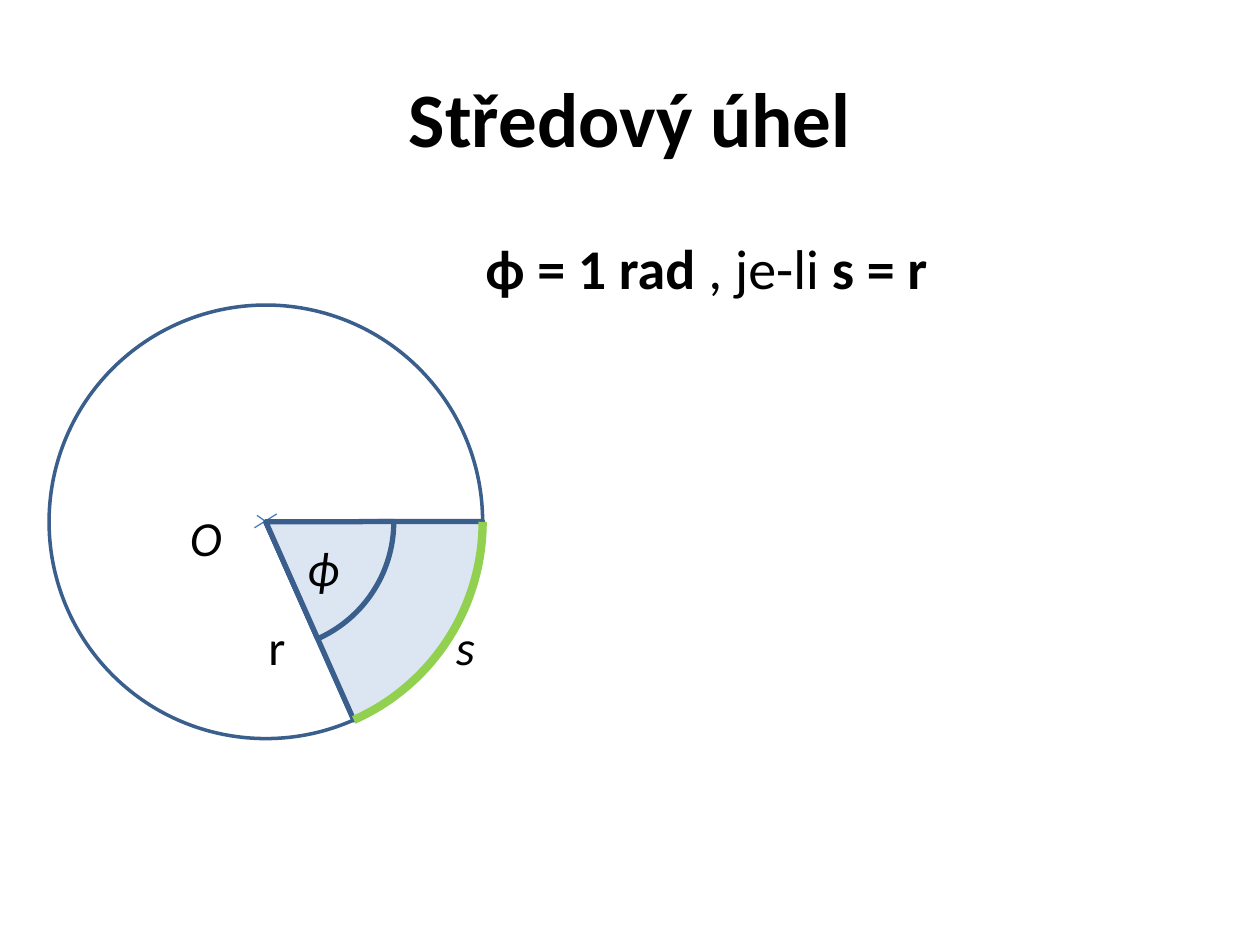
from dataclasses import dataclass
from math import cos, radians, sin

from lxml.etree import SubElement
from pptx import Presentation
from pptx.dml.color import RGBColor
from pptx.enum.shapes import MSO_CONNECTOR, MSO_SHAPE
from pptx.enum.text import MSO_ANCHOR, PP_ALIGN
from pptx.oxml.ns import qn
from pptx.util import Cm, Pt


@dataclass(frozen=True)
class Theme:
    """Colours, font and type sizes of the slide."""
    font: str = "Calibri"
    ink: str = "000000"
    outline: str = "3A5F8C"
    ray: str = "4B7EBC"
    sector: str = "DCE6F2"
    arc: str = "92D050"
    title: int = 44
    body: int = 32
    label: int = 28


@dataclass(frozen=True)
class Box:
    """A region of the slide in centimetres."""
    left: float
    top: float
    width: float
    height: float

    def lengths(self):
        """Return the region as slide lengths."""
        return [Cm(value) for value in (self.left, self.top, self.width, self.height)]


THEME = Theme()
ANGLE = 66.06
START = 359.91


def style_span(span, size, bold=False, italic=False):
    """Apply the theme font to a run."""
    span.font.name = THEME.font
    span.font.size = Pt(size)
    span.font.bold = bold
    span.font.italic = italic
    span.font.color.rgb = RGBColor.from_string(THEME.ink)


def style_line(line, color, width):
    """Set the colour and width of a line."""
    line.color.rgb = RGBColor.from_string(color)
    line.width = Pt(width)


def move(shape, box):
    """Place a shape in a box."""
    shape.left, shape.top, shape.width, shape.height = box.lengths()


def add_line(shapes, start, end, color, width):
    """Draw a straight line without a shadow."""
    points = [Cm(value) for value in (*start, *end)]
    line = shapes.add_connector(MSO_CONNECTOR.STRAIGHT, *points)
    style_line(line.line, color, width)
    SubElement(line._element.spPr, qn("a:effectLst"))


def add_round(page, kind, center, radius, width, fill=None):
    """Draw a circle or a pie around a centre."""
    box = Box(center[0] - radius, center[1] - radius, 2 * radius, 2 * radius)
    shape = page.shapes.add_shape(kind, *box.lengths())
    shape.shadow.inherit = False
    style_line(shape.line, THEME.outline, width)
    if fill:
        shape.fill.solid()
        shape.fill.fore_color.rgb = RGBColor.from_string(fill)
    else:
        shape.fill.background()
    return shape


def add_sector(page, center, radius):
    """Draw the sector that spans the central angle."""
    pie = add_round(page, MSO_SHAPE.PIE, center, radius, 3, THEME.sector)
    pie.adjustments[0] = START * 0.6
    pie.adjustments[1] = ANGLE * 0.6


def point_on_circle(center, radius, degrees):
    """Return the point at an angle measured clockwise."""
    turn = radians(degrees)
    return center[0] + radius * cos(turn), center[1] + radius * sin(turn)


def add_arc(page, center, radius):
    """Trace the arc s along the rim of the circle."""
    steps = 33
    points = [point_on_circle(center, radius, ANGLE * step / steps) for step in range(steps + 1)]
    points = [(Cm(x), Cm(y)) for x, y in points]
    builder = page.shapes.build_freeform(*points[0])
    builder.add_line_segments(points[1:], close=False)
    arc = builder.convert_to_shape()
    arc.shadow.inherit = False
    arc.fill.background()
    style_line(arc.line, THEME.arc, 4.75)


def add_label(page, box, text, italic):
    """Write a letter of the diagram."""
    frame = page.shapes.add_textbox(*box.lengths()).text_frame
    frame.word_wrap = True
    frame.text = text
    style_span(frame.paragraphs[0].runs[0], THEME.label, italic=italic)


def add_cross(page, center):
    """Mark the centre with two short crossing strokes."""
    x, y = center
    group = page.shapes.add_group_shape()
    add_line(group.shapes, (x - 0.18, y - 0.13), (x + 0.22, y + 0.15), THEME.ray, 0.75)
    add_line(group.shapes, (x + 0.22, y - 0.16), (x - 0.23, y + 0.12), THEME.ray, 0.75)


def add_title(page, box):
    """Fill the title placeholder."""
    title = page.shapes.title
    move(title, box)
    frame = title.text_frame
    frame.text = "Středový úhel"
    frame.vertical_anchor = MSO_ANCHOR.MIDDLE
    frame.paragraphs[0].alignment = PP_ALIGN.CENTER
    style_span(frame.paragraphs[0].runs[0], THEME.title, bold=True)


def add_definition(page, box):
    """Fill the body placeholder with the definition of a radian."""
    body = page.placeholders[1]
    move(body, box)
    para = body.text_frame.paragraphs[0]
    for text, bold in (("ϕ = 1 rad ", True), (", je-li ", False), ("s = r", True)):
        span = para.add_run()
        span.text = text
        style_span(span, THEME.body, bold=bold)
    properties = para._p.get_or_add_pPr()
    properties.set("marL", "0")
    properties.set("indent", "0")
    SubElement(properties, qn("a:buNone"))


def add_diagram(page, box):
    """Draw the circle with its central angle, arc and letters."""
    radius = box.width / 2
    center = (box.left + radius, box.top + radius)
    add_round(page, MSO_SHAPE.OVAL, center, radius, 2)
    add_line(page.shapes, center, point_on_circle(center, radius, 0), THEME.ink, 0.75)
    add_line(page.shapes, center, point_on_circle(center, radius, ANGLE), THEME.ray, 3)
    add_cross(page, center)
    add_sector(page, center, radius)
    add_arc(page, center, radius)
    add_sector(page, center, 2.58)
    labels = (("r", 4.17, 6.15, False), ("O", 2.59, 3.96, True),
              ("s", 7.95, 6.15, True), ("ϕ", 4.95, 4.57, True))
    for text, x, y, italic in labels:
        add_label(page, Box(box.left + x, box.top + y, 1.6, 1.45), text, italic)


def main():
    """Build and save the slide."""
    deck = Presentation()
    deck.slide_width, deck.slide_height = Cm(25.4), Cm(19.05)
    page = deck.slides.add_slide(deck.slide_layouts[1])
    add_title(page, Box(1.27, 0.76, 22.86, 3.18))
    add_definition(page, Box(9.53, 4.57, 12.9, 1.9))
    add_diagram(page, Box(0.99, 6.15, 8.74, 8.74))
    deck.save("out.pptx")


if __name__ == "__main__":
    main()
